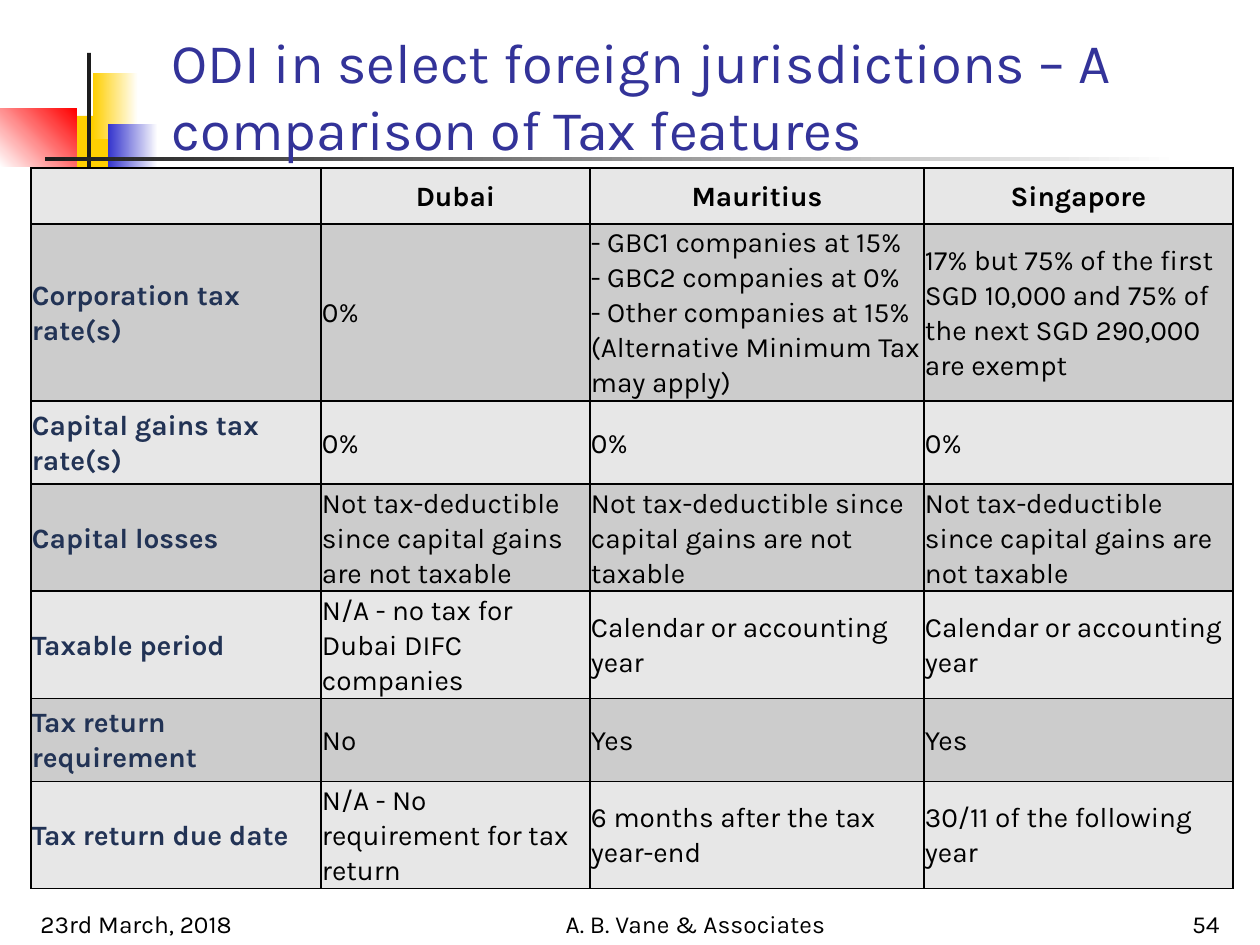
"""Build the slide comparing tax features of foreign jurisdictions."""
from lxml import etree
from pptx import Presentation
from pptx.dml.color import RGBColor
from pptx.enum.shapes import MSO_SHAPE
from pptx.enum.text import MSO_ANCHOR, MSO_AUTO_SIZE, PP_ALIGN
from pptx.oxml.ns import qn
from pptx.util import Emu, Pt

RECTANGLE = MSO_SHAPE.RECTANGLE
MIDDLE, BOTTOM = MSO_ANCHOR.MIDDLE, MSO_ANCHOR.BOTTOM
LEFT, CENTER, RIGHT = PP_ALIGN.LEFT, PP_ALIGN.CENTER, PP_ALIGN.RIGHT
FONT = "Karla"
COLORS = {
    "white": "FFFFFF", "black": "000000", "ink": "1C1C1C", "title": "333399",
    "label": "223355", "yellow": "FFCF01", "blue": "3333CC", "red": "FF0000",
    "light": "E7E7E7", "dark": "CCCCCC",
}


def px(*lengths):
    return [Emu(round(length * 914400 / 126)) for length in lengths]


def add_run(paragraph, text, size, color, bold=False):
    run = paragraph.add_run()
    run.text = text
    run.font.name = FONT
    run.font.size = Pt(size)
    run.font.bold = bold
    run.font.color.rgb = RGBColor.from_string(COLORS[color])


presentation = Presentation()
presentation.slide_width, presentation.slide_height = px(1260, 945)
slide = presentation.slides.add_slide(presentation.slide_layouts[5])

decorations = [
    ((58, 116, 60, 66), ["yellow"], 0),
    ((93, 73, 45, 66), ["yellow", "white"], 0),
    ((108, 124, 50, 66), ["blue", "white"], 0),
    ((0, 109, 77, 58), ["white", "red"], 45),
    ((87, 53, 4, 145), ["ink"], 0),
    ((45, 157, 1134, 4), ["ink", "white"], 0),
]
for box, colors, angle in decorations:
    shape = slide.shapes.add_shape(RECTANGLE, *px(*box))
    shape.shadow.inherit = False
    shape.line.fill.background()
    if len(colors) == 1:
        shape.fill.solid()
        shape.fill.fore_color.rgb = RGBColor.from_string(COLORS[colors[0]])
    else:
        shape.fill.gradient()
        shape.fill.gradient_angle = angle
        for position, (stop, color) in enumerate(zip(shape.fill.gradient_stops, colors)):
            stop.position = position
            stop.color.rgb = RGBColor.from_string(COLORS[color])

title = slide.shapes.title
slide.shapes.element.append(title.element)
title.left, title.top, title.width, title.height = px(159, 29, 1074, 139)
title.text_frame.auto_size = MSO_AUTO_SIZE.NONE
title.text_frame.vertical_anchor = BOTTOM
title_paragraph = title.text_frame.paragraphs[0]
title_paragraph.alignment = LEFT
add_run(title_paragraph, "ODI in select foreign jurisdictions – A comparison of Tax features", 32, "title")

not_deductible = "Not tax-deductible since capital gains are not taxable"
rows = [
    ["", "Dubai", "Mauritius", "Singapore"],
    ["Corporation tax rate(s)", "0%",
     "- GBC1 companies at 15%\n- GBC2 companies at 0%\n"
     "- Other companies at 15% (Alternative Minimum Tax may apply)",
     "17% but 75% of the first SGD 10,000 and 75% of the next SGD 290,000 are exempt"],
    ["Capital gains tax rate(s)", "0%", "0%", "0%"],
    ["Capital losses", not_deductible, not_deductible, not_deductible],
    ["Taxable period", "N/A - no tax for Dubai DIFC companies",
     "Calendar or accounting year", "Calendar or accounting year"],
    ["Tax return requirement", "No", "Yes", "Yes"],
    ["Tax return due date", "N/A - No requirement for tax return",
     "6 months after the tax year-end", "30/11 of the following year"],
]
column_widths = px(290, 269, 334, 309)
row_heights = px(56, 170, 83, 102, 102, 83, 68)
table = slide.shapes.add_table(
    len(rows), len(column_widths), *px(31, 168), sum(column_widths), sum(row_heights)
).table
for column, width in zip(table.columns, column_widths):
    column.width = width

for row_index, (texts, height) in enumerate(zip(rows, row_heights)):
    table.rows[row_index].height = height
    for column_index, text in enumerate(texts):
        cell = table.cell(row_index, column_index)
        cell.margin_left, cell.margin_right, cell.margin_top, cell.margin_bottom = px(1, 1, 1, 1)
        cell.vertical_anchor = MIDDLE
        properties = cell._tc.get_or_add_tcPr()
        for side in ("a:lnL", "a:lnR", "a:lnT", "a:lnB"):
            border = etree.SubElement(properties, qn(side), w=str(Pt(1)))
            border_fill = etree.SubElement(border, qn("a:solidFill"))
            etree.SubElement(border_fill, qn("a:srgbClr"), val=COLORS["black"])
        cell.fill.solid()
        cell.fill.fore_color.rgb = RGBColor.from_string(COLORS["dark" if row_index % 2 else "light"])
        if not text:
            continue
        is_header, is_label = row_index == 0, column_index == 0
        paragraph = cell.text_frame.paragraphs[0]
        paragraph.alignment = CENTER if is_header else LEFT
        paragraph.line_spacing = 1.07
        for line_index, line in enumerate(text.split("\n")):
            if line_index:
                paragraph.add_line_break()
            add_run(paragraph, line, 16, "label" if is_label else "black", is_header or is_label)

footers = [
    ("23rd March, 2018", 28, 262, LEFT),
    ("A. B. Vane & Associates", 496, 399, CENTER),
    ("54", 970, 262, RIGHT),
]
for text, left, width, alignment in footers:
    text_frame = slide.shapes.add_textbox(*px(left, 882, width, 63)).text_frame
    text_frame.word_wrap = True
    text_frame.vertical_anchor = BOTTOM
    paragraph = text_frame.paragraphs[0]
    paragraph.alignment = alignment
    add_run(paragraph, text, 14, "black")

presentation.save("out.pptx")
